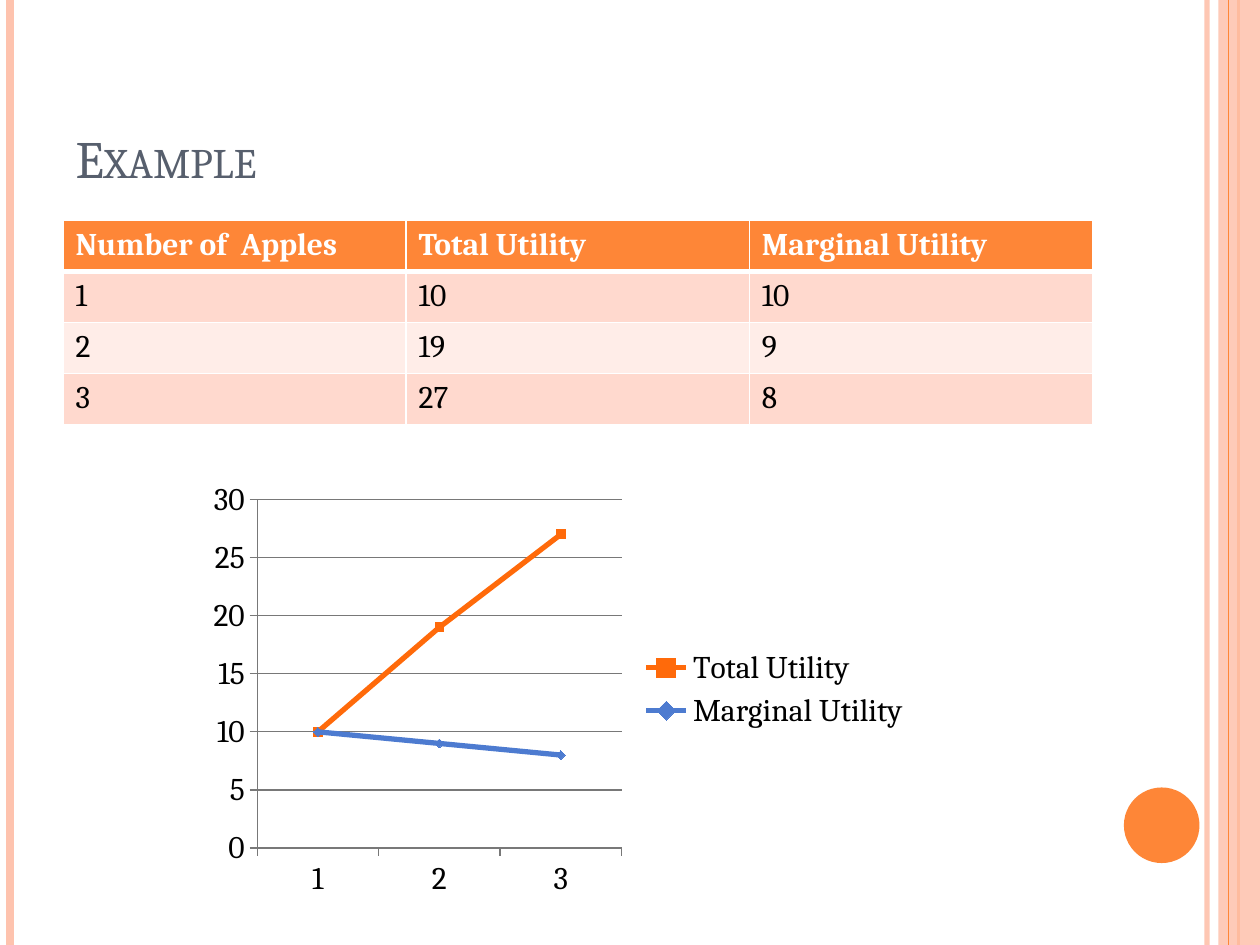
from lxml import etree
from pptx import Presentation
from pptx.chart.data import CategoryChartData
from pptx.dml.color import RGBColor
from pptx.enum.chart import XL_CHART_TYPE, XL_LEGEND_POSITION, XL_MARKER_STYLE, XL_TICK_MARK
from pptx.enum.shapes import MSO_CONNECTOR, MSO_SHAPE
from pptx.enum.text import MSO_ANCHOR, PP_ALIGN
from pptx.oxml.ns import qn
from pptx.util import Inches, Pt

LINE = XL_CHART_TYPE.LINE_MARKERS
RIGHT = XL_LEGEND_POSITION.RIGHT
SQUARE = XL_MARKER_STYLE.SQUARE
DIAMOND = XL_MARKER_STYLE.DIAMOND
OUT = XL_TICK_MARK.OUTSIDE
STRAIGHT = MSO_CONNECTOR.STRAIGHT
RECT = MSO_SHAPE.RECTANGLE
OVAL = MSO_SHAPE.OVAL
BOTTOM = MSO_ANCHOR.BOTTOM
LEFT = PP_ALIGN.LEFT

WHITE = RGBColor(0xFF, 0xFF, 0xFF)
BLACK = RGBColor(0, 0, 0)
SLATE = RGBColor(0x57, 0x5F, 0x6D)
ORANGE = RGBColor(0xFE, 0x86, 0x37)
PEACH = RGBColor(0xFE, 0xC3, 0xAE)
PINK = RGBColor(0xFF, 0xD9, 0xCE)
PALE = RGBColor(0xFF, 0xED, 0xE8)
GREY = RGBColor(0x78, 0x78, 0x78)
FLAME = RGBColor(0xFF, 0x6A, 0x0A)
BLUE = RGBColor(0x4D, 0x7B, 0xD0)
FONT = "Cambria"


def fade(shape, part, alpha):
    color = shape._element.spPr.find(part).find(".//" + qn("a:srgbClr"))
    etree.SubElement(color, qn("a:alpha"), val=str(alpha * 1000))


def style(font, size, color, bold=False):
    font.name = FONT
    font.size = Pt(size)
    font.bold = bold
    font.color.rgb = color


prs = Presentation()
prs.slide_width = Inches(10)
prs.slide_height = Inches(7.5)
slide = prs.slides.add_slide(prs.slide_layouts[5])
shapes = slide.shapes
slide.background.fill.solid()
slide.background.fill.fore_color.rgb = WHITE

band = shapes.add_shape(RECT, Inches(9.67), 0, Inches(0.33), Inches(7.5))
dot = shapes.add_shape(OVAL, Inches(8.92), Inches(6.25), Inches(0.6), Inches(0.6))
for shape, color in [(band, PEACH), (dot, ORANGE)]:
    shape.shadow.inherit = False
    shape.fill.solid()
    shape.fill.fore_color.rgb = color
    shape.line.fill.background()
fade(band, qn("a:solidFill"), 87)

rules = [
    (9.58, PEACH, 3, 93),
    (0.08, PEACH, 4.5, 100),
    (9.83, ORANGE, 1.5, 100),
    (9.75, ORANGE, 0.75, 100),
]
for x, color, width, alpha in rules:
    rule = shapes.add_connector(STRAIGHT, Inches(x), 0, Inches(x), Inches(7.5))
    rule.line.color.rgb = color
    rule.line.width = Pt(width)
    if alpha < 100:
        fade(rule, qn("a:ln"), alpha)
    etree.SubElement(rule._element.spPr, qn("a:effectLst"))
    if x == 9.83:
        band._element.addprevious(rule._element)

title = shapes.title
title.left, title.top = Inches(0.5), Inches(0.3)
title.width, title.height = Inches(8.17), Inches(1.25)
title.text_frame.vertical_anchor = BOTTOM
para = title.text_frame.paragraphs[0]
para.alignment = LEFT
run = para.add_run()
run.text = "Example"
style(run.font, 30, SLATE)
run._r.get_or_add_rPr().set("cap", "small")

names = ["Total Utility", "Marginal Utility"]
cats = ["1", "2", "3"]
totals = [10, 19, 27]
margins = [10, 9, 8]
rows = [["Number of  Apples", *names], *zip(cats, totals, margins)]
fills = [ORANGE, PINK, PALE, PINK]

table = shapes.add_table(
    4, 3, Inches(0.5), Inches(1.75), Inches(8.17), Inches(1.62)
).table
for i, row in enumerate(rows):
    for j, value in enumerate(row):
        cell = table.cell(i, j)
        run = cell.text_frame.paragraphs[0].add_run()
        run.text = str(value)
        style(run.font, 18, BLACK if i else WHITE, i == 0)
        props = cell._tc.get_or_add_tcPr()
        for side in "LRTB":
            thick = (side == "B" and i == 0) or (side == "T" and i == 1)
            edge = etree.SubElement(
                props, qn("a:ln" + side), w=str(Pt(3 if thick else 1))
            )
            paint = etree.SubElement(edge, qn("a:solidFill"))
            etree.SubElement(paint, qn("a:srgbClr"), val=str(WHITE))
        cell.fill.solid()
        cell.fill.fore_color.rgb = fills[i]

data = CategoryChartData()
data.categories = cats
for name, values in zip(names, [totals, margins]):
    data.add_series(name, values)
chart = shapes.add_chart(
    LINE, Inches(1.58), Inches(3.75), Inches(5.75), Inches(3.44), data
).chart
style(chart.font, 18, BLACK)
chart.has_title = False
chart.has_legend = True
chart.legend.position = RIGHT
chart.legend.include_in_layout = False
for axis in [chart.category_axis, chart.value_axis]:
    axis.major_tick_mark = OUT
    axis.format.line.color.rgb = GREY
    axis.format.line.width = Pt(0.75)
scale = chart.value_axis
scale.minimum_scale, scale.maximum_scale, scale.major_unit = 0, 30, 5
scale.has_major_gridlines = True
scale.major_gridlines.format.line.color.rgb = GREY
scale.major_gridlines.format.line.width = Pt(0.75)

plot = chart.plots[0]
plot.vary_by_categories = False
for series, color, mark in zip(plot.series, [FLAME, BLUE], [SQUARE, DIAMOND]):
    series.smooth = False
    series.format.line.color.rgb = color
    series.format.line.width = Pt(3)
    series.marker.style = mark
    series.marker.size = 5
    series.marker.format.fill.solid()
    series.marker.format.fill.fore_color.rgb = color
    series.marker.format.line.color.rgb = color

prs.save("out.pptx")
